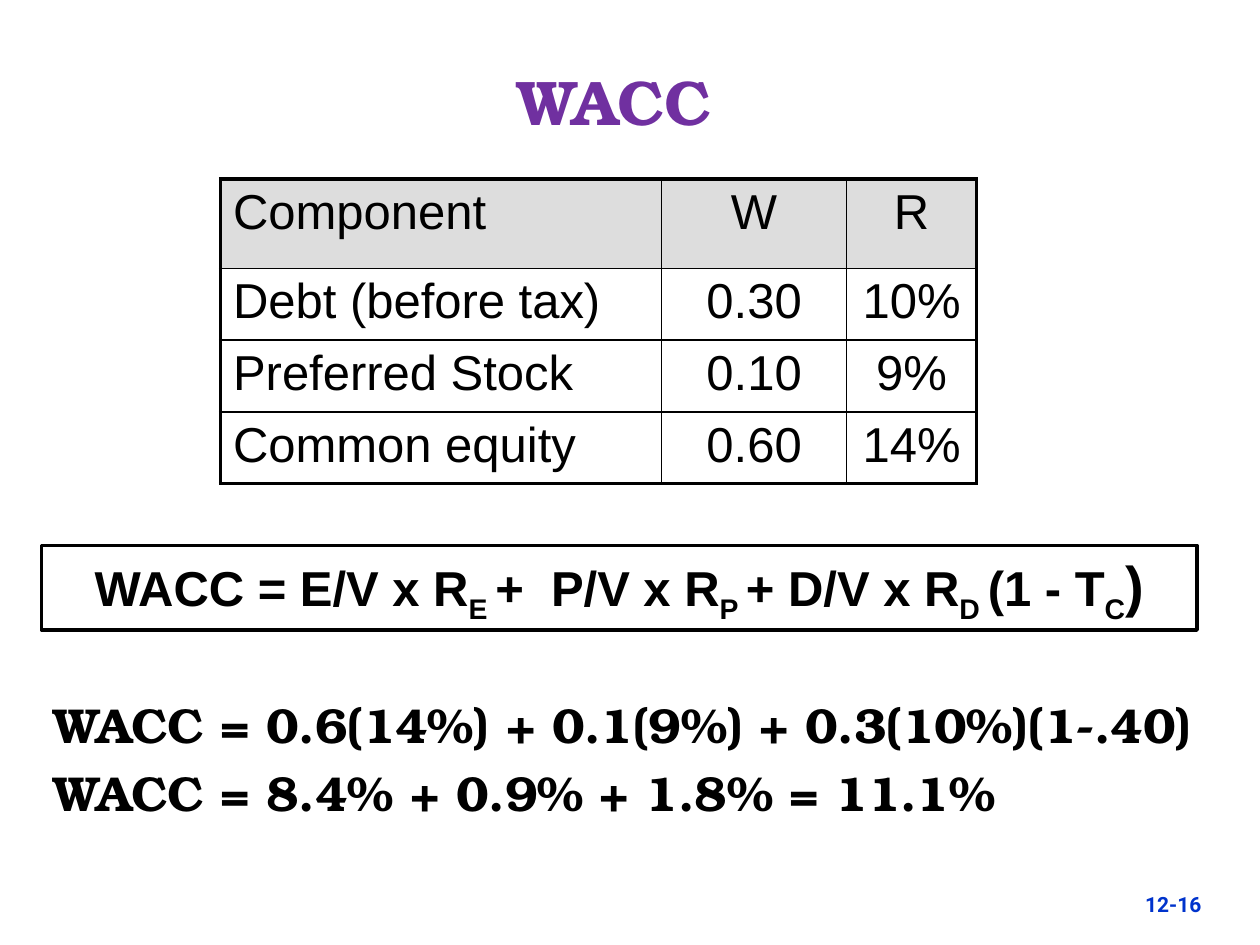
from lxml.etree import SubElement
from pptx import Presentation
from pptx.dml.color import RGBColor
from pptx.enum.shapes import MSO_SHAPE
from pptx.enum.text import MSO_ANCHOR, PP_ALIGN
from pptx.oxml.ns import qn
from pptx.util import Inches, Pt

BLACK = RGBColor(0x00, 0x00, 0x00)
PURPLE = RGBColor(0x70, 0x30, 0xA0)
BLUE = RGBColor(0x00, 0x33, 0xCC)
GREY = RGBColor(0xDD, 0xDD, 0xDD)
SERIF = "TeX Gyre Bonum"

TITLE = "WACC"
PAGE_NUMBER = "12-16"
COMPONENTS = [
    ("Component", "W", "R"),
    ("Debt (before tax)", "0.30", "10%"),
    ("Preferred Stock", "0.10", "9%"),
    ("Common equity", "0.60", "14%"),
]
COLUMN_WIDTHS = (3.5, 1.47, 1.03)
ROW_HEIGHTS = (0.71, 0.57, 0.57, 0.57)
FORMULA = [
    ("WACC = E/V x R", "E "),
    ("+  P/V x R", "P "),
    ("+ D/V x R", "D "),
    ("(1 - T", "C"),
]
CALCULATION = [
    "WACC = 0.6(14%) + 0.1(9%) + 0.3(10%)(1-.40)",
    "WACC = 8.4% + 0.9% + 1.8% = 11.1%",
]

TITLE_FONT = {"name": SERIF, "size": Pt(36), "bold": True}
TABLE_FONT = {"name": "Arial", "size": Pt(28), "bold": False}
FORMULA_FONT = {"name": "Arial", "size": Pt(28), "bold": True}
CALCULATION_FONT = {"name": SERIF, "size": Pt(28), "bold": True}
NUMBER_FONT = {"name": "Roboto", "size": Pt(12), "bold": True}


def format_font(font, values, color=BLACK):
    for name, value in values.items():
        setattr(font, name, value)
    font.color.rgb = color


def place(shape, *box):
    for name, value in zip(("left", "top", "width", "height"), box):
        setattr(shape, name, Inches(value))


def add_text(slide, box, lines, font, color=BLACK):
    frame = slide.shapes.add_textbox(*map(Inches, box)).text_frame
    frame.word_wrap = True
    for index, line in enumerate(lines):
        paragraph = frame.add_paragraph() if index else frame.paragraphs[0]
        paragraph.space_before = Pt(5.6 if index else 0)
        paragraph.text = line
        format_font(paragraph.font, font, color)


def add_border(cell, side, width):
    line = SubElement(cell._tc.get_or_add_tcPr(), qn(f"a:ln{side}"), w=str(Pt(width)))
    fill = SubElement(line, qn("a:solidFill"))
    SubElement(fill, qn("a:srgbClr"), val=str(BLACK))


def add_component_table(slide):
    row_count, column_count = len(COMPONENTS), len(COLUMN_WIDTHS)
    box = map(Inches, (1.75, 1.42, sum(COLUMN_WIDTHS), sum(ROW_HEIGHTS)))
    table = slide.shapes.add_table(row_count, column_count, *box).table
    table.first_row = table.horz_banding = False
    for column, width in zip(table.columns, COLUMN_WIDTHS):
        column.width = Inches(width)
    for row, height in zip(table.rows, ROW_HEIGHTS):
        row.height = Inches(height)
    for i, values in enumerate(COMPONENTS):
        for j, value in enumerate(values):
            cell = table.cell(i, j)
            outer = {"L": j == 0, "R": j == column_count - 1,
                     "T": i == 0, "B": i == row_count - 1}
            for side, is_outer in outer.items():
                add_border(cell, side, 2.25 if is_outer else 1)
            if i == 0:
                cell.fill.solid()
                cell.fill.fore_color.rgb = GREY
            else:
                cell.fill.background()
            paragraph = cell.text_frame.paragraphs[0]
            paragraph.text = value
            paragraph.alignment = PP_ALIGN.CENTER if j else PP_ALIGN.LEFT
            format_font(paragraph.font, TABLE_FONT)


def add_formula(slide):
    shape = slide.shapes.add_shape(
        MSO_SHAPE.RECTANGLE, *map(Inches, (0.33, 4.33, 9.17, 0.67)))
    shape.shadow.inherit = False
    shape.fill.background()
    shape.line.color.rgb = BLACK
    shape.line.width = Pt(2.25)
    shape.text_frame.vertical_anchor = MSO_ANCHOR.MIDDLE
    paragraph = shape.text_frame.paragraphs[0]
    paragraph.alignment = PP_ALIGN.CENTER
    for term, subscript in FORMULA:
        for text, baseline in ((term, 0), (subscript, -25000)):
            run = paragraph.add_run()
            run.text = text
            format_font(run.font, FORMULA_FONT)
            run.font._element.set("baseline", str(baseline))
    closing = paragraph.add_run()
    closing.text = ")"
    format_font(closing.font, FORMULA_FONT | {"size": Pt(32)})


def main():
    """Build the slide on the weighted average cost of capital."""
    presentation = Presentation()
    presentation.slide_width, presentation.slide_height = Inches(10), Inches(7.5)
    slide = presentation.slides.add_slide(presentation.slide_layouts[5])
    title = slide.shapes.title
    place(title, 0.5, 0.17, 8.75, 1.25)
    title.text_frame.text = TITLE
    title.text_frame.vertical_anchor = MSO_ANCHOR.MIDDLE
    paragraph = title.text_frame.paragraphs[0]
    paragraph.alignment = PP_ALIGN.CENTER
    format_font(paragraph.font, TITLE_FONT, PURPLE)
    add_text(slide, (0.33, 5.46, 9.37, 1.54), CALCULATION, CALCULATION_FONT)
    add_component_table(slide)
    add_formula(slide)
    add_text(slide, (8.99, 7.03, 0.92, 0.34), [PAGE_NUMBER], NUMBER_FONT, BLUE)
    presentation.save("out.pptx")


if __name__ == "__main__":
    main()
